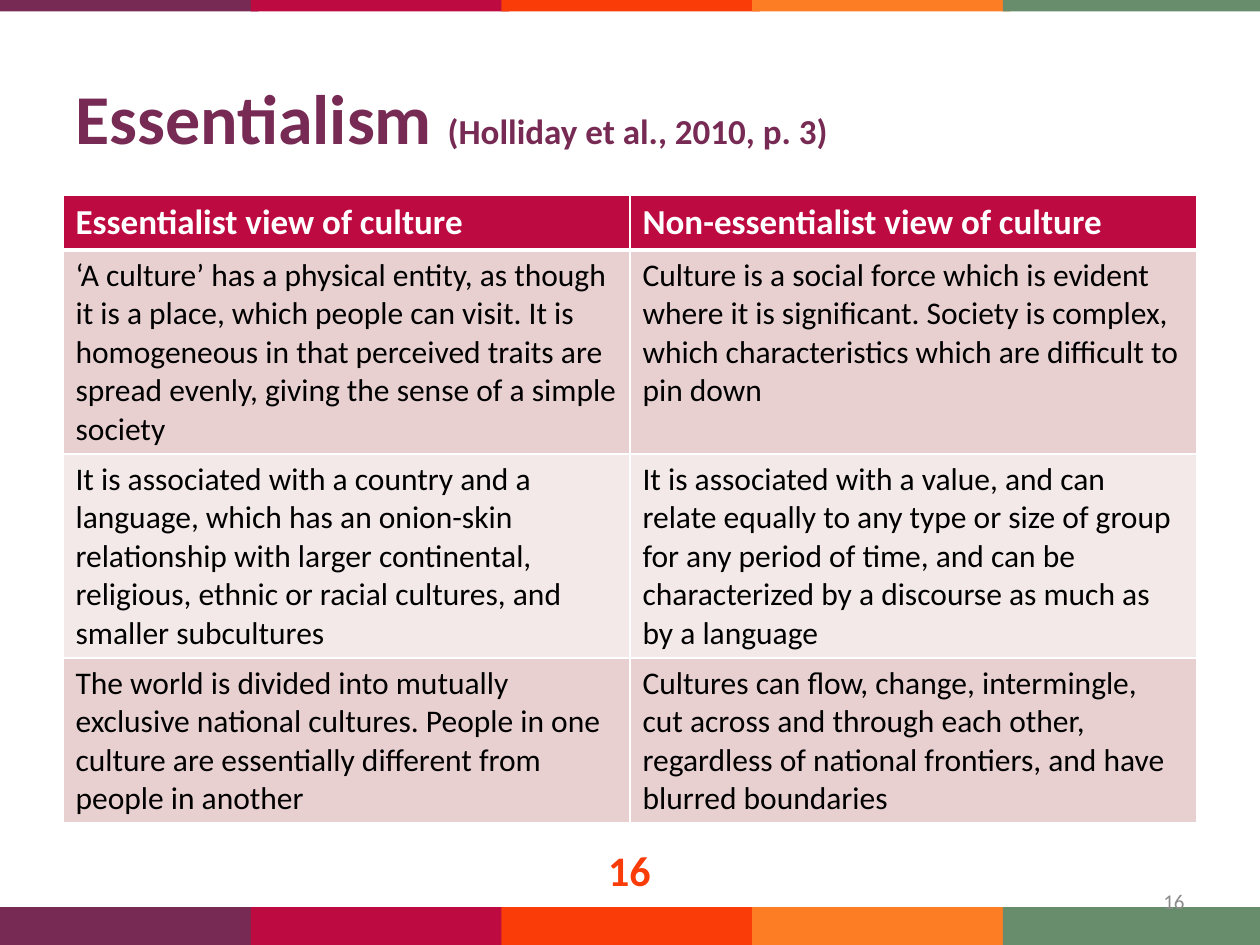
from lxml.etree import SubElement
from pptx import Presentation
from pptx.dml.color import RGBColor
from pptx.enum.shapes import MSO_SHAPE as Shape
from pptx.enum.text import MSO_ANCHOR as Anchor, PP_ALIGN as Align
from pptx.oxml.ns import qn
from pptx.util import Inches, Pt

COLORS = {
    "plum": "772A53", "crimson": "BD0A41", "red": "FA3C08",
    "orange": "FC7D23", "green": "678D6C", "white": "FFFFFF",
    "black": "000000", "grey": "8C8C8C", "band": "E8D0D0", "pale": "F4E9E9",
}
ROWS = [
    ("Essentialist view of culture", "Non-essentialist view of culture"),
    ("‘A culture’ has a physical entity, as though it is a place, which people "
     "can visit. It is homogeneous in that perceived traits are spread evenly, "
     "giving the sense of a simple society",
     "Culture is a social force which is evident where it is significant. Society "
     "is complex, which characteristics which are difficult to pin down"),
    ("It is associated with a country and a language, which has an onion-skin "
     "relationship with larger continental, religious, ethnic or racial cultures, "
     "and smaller subcultures",
     "It is associated with a value, and can relate equally to any type or size of "
     "group for any period of time, and can be characterized by a discourse as "
     "much as by a language"),
    ("The world is divided into mutually exclusive national cultures. People in "
     "one culture are essentially different from people in another",
     "Cultures can flow, change, intermingle, cut across and through each other, "
     "regardless of national frontiers, and have blurred boundaries"),
]
ROW_HEIGHTS = [0.42, 1.62, 1.62, 1.31]
ROW_FILLS = ["crimson", "band", "pale", "band"]


def style(font, size, color, bold=False):
    font.name, font.size, font.bold = "Calibri", Pt(size), bold
    font.color.rgb = RGBColor.from_string(COLORS[color])


def add_text(left, top, width, height, parts, color, bold, align):
    box = slide.shapes.add_textbox(*map(Inches, (left, top, width, height)))
    frame = box.text_frame
    frame.word_wrap = True
    frame.vertical_anchor = Anchor.MIDDLE
    paragraph = frame.paragraphs[0]
    paragraph.alignment = align
    for text, size in parts:
        run = paragraph.add_run()
        run.text = text
        style(run.font, size, color, bold)


presentation = Presentation()
presentation.slide_width, presentation.slide_height = Inches(10), Inches(7.5)
slide = presentation.slides.add_slide(presentation.slide_layouts[6])

# Colour strips along the top and bottom edges, slightly overlapping
for top, height in ((0, 0.09), (7.2, 0.3)):
    for column, color in enumerate(("plum", "crimson", "red", "orange", "green")):
        strip = slide.shapes.add_shape(
            Shape.RECTANGLE, Inches(column * 1.99), Inches(top),
            Inches(2.05), Inches(height))
        strip.shadow.inherit = False
        strip.fill.solid()
        strip.fill.fore_color.rgb = RGBColor.from_string(COLORS[color])
        strip.line.fill.background()

# Title with citation
add_text(0.5, 0.3, 9, 1.25,
         [("Essentialism ", 40), ("(Holliday et al., 2010, p. 3)", 20)],
         "plum", True, Align.LEFT)

# Comparison table
table = slide.shapes.add_table(
    len(ROWS), 2, Inches(0.5), Inches(1.55), Inches(9), Inches(sum(ROW_HEIGHTS))).table
for r, texts in enumerate(ROWS):
    table.rows[r].height = Inches(ROW_HEIGHTS[r])
    header = r == 0
    for c, text in enumerate(texts):
        cell = table.cell(r, c)
        cell.text_frame.text = text
        style(cell.text_frame.paragraphs[0].runs[0].font, 20 if header else 18,
              "white" if header else "black", header)
        properties = cell._tc.get_or_add_tcPr()
        for side in "LRTB":
            thick = (header and side == "B") or (r == 1 and side == "T")
            border = SubElement(properties, qn(f"a:ln{side}"), w=str(Pt(3 if thick else 1)))
            SubElement(SubElement(border, qn("a:solidFill")), qn("a:srgbClr"),
                       val=COLORS["white"])
        cell.fill.solid()
        cell.fill.fore_color.rgb = RGBColor.from_string(COLORS[ROW_FILLS[r]])

# Page numbers
add_text(7.17, 6.95, 2.33, 0.4, [("16", 12)], "grey", False, Align.RIGHT)
add_text(3.83, 6.7, 2.33, 0.4, [("16", 24)], "red", True, Align.CENTER)

presentation.save("out.pptx")
